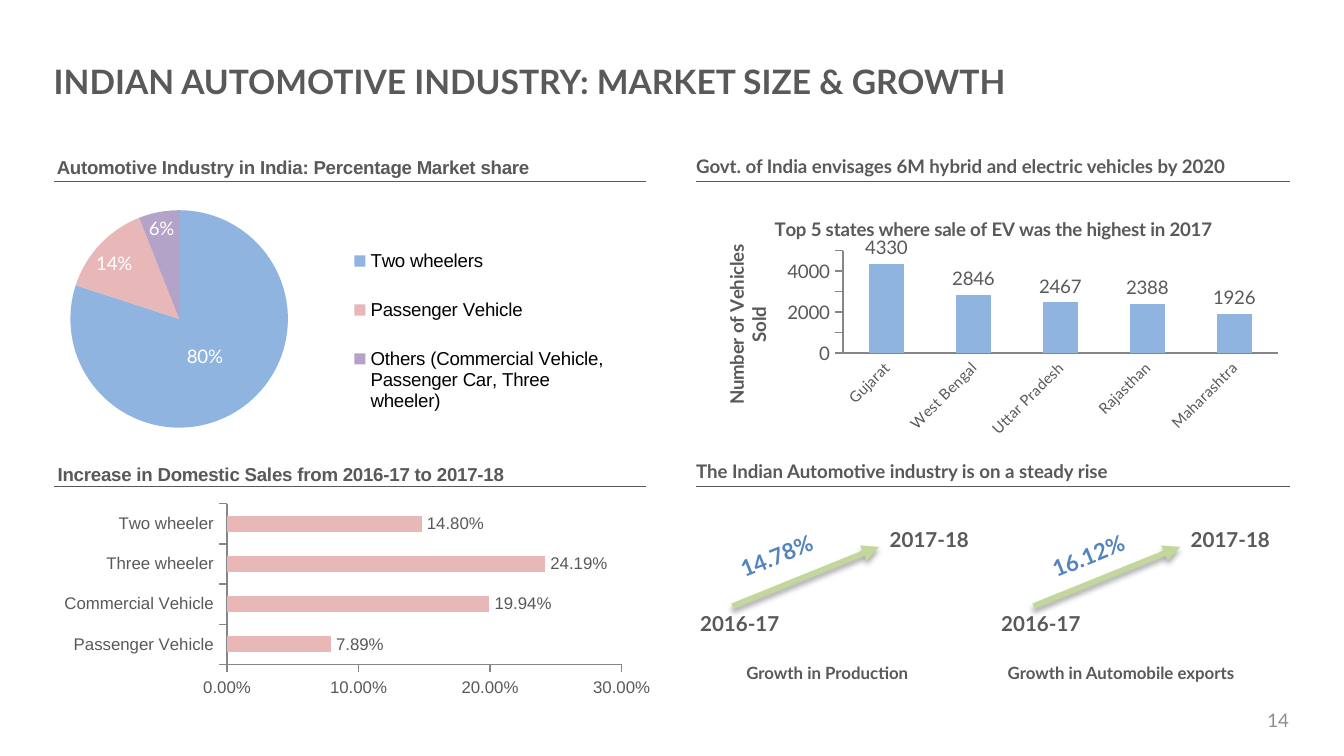
"""Build a slide on the size and growth of the Indian automotive industry."""
from lxml import etree
from pptx import Presentation
from pptx.chart.data import CategoryChartData
from pptx.dml.color import RGBColor
from pptx.enum.chart import XL_CHART_TYPE, XL_LABEL_POSITION, XL_LEGEND_POSITION, XL_TICK_MARK
from pptx.enum.shapes import MSO_CONNECTOR
from pptx.enum.text import MSO_ANCHOR, PP_ALIGN
from pptx.oxml import parse_xml
from pptx.oxml.ns import nsdecls, qn
from pptx.util import Inches, Pt

BAR, COLUMN, PIE = XL_CHART_TYPE.BAR_CLUSTERED, XL_CHART_TYPE.COLUMN_CLUSTERED, XL_CHART_TYPE.PIE
CENTER, INSIDE_END, OUTSIDE_END = (
    XL_LABEL_POSITION.CENTER, XL_LABEL_POSITION.INSIDE_END, XL_LABEL_POSITION.OUTSIDE_END)
TICK_OUT, TICK_NONE = XL_TICK_MARK.OUTSIDE, XL_TICK_MARK.NONE
LEGEND_RIGHT = XL_LEGEND_POSITION.RIGHT
STRAIGHT = MSO_CONNECTOR.STRAIGHT
MIDDLE, TOP = MSO_ANCHOR.MIDDLE, MSO_ANCHOR.TOP
ALIGN_LEFT, ALIGN_CENTER, ALIGN_RIGHT = PP_ALIGN.LEFT, PP_ALIGN.CENTER, PP_ALIGN.RIGHT

GREY = RGBColor(0x59, 0x59, 0x59)
LIGHT_GREY = RGBColor(0x8C, 0x8C, 0x8C)
AXIS_GREY = RGBColor(0x86, 0x86, 0x86)
BLACK = RGBColor(0, 0, 0)
WHITE = RGBColor(0xFF, 0xFF, 0xFF)
BLUE = RGBColor(0x8F, 0xB4, 0xE0)
DARK_BLUE = RGBColor(0x53, 0x84, 0xBE)
PINK = RGBColor(0xE7, 0xB8, 0xB7)
PURPLE = RGBColor(0xB3, 0xA3, 0xC8)
GREEN = RGBColor(0xC3, 0xD6, 0x9B)

COLUMNS = ((0.4, 4.41), (5.18, 4.42))
RULES = (1.35, 3.62)
PANEL_LEFT, PANEL_STEP = 5.13, 2.24
SMALL_INSETS = (0.08, 0.04, 0.08, 0.04)


def set_font(font, size, color, name="Lato", bold=False):
    font.name, font.size, font.bold = name, Pt(size), bold
    font.color.rgb = color


def add_text(slide, box, text, size, color=GREY, bold=True, align=ALIGN_LEFT,
             anchor=TOP, insets=SMALL_INSETS, rotation=0):
    shape = slide.shapes.add_textbox(*map(Inches, box))
    shape.rotation = rotation
    frame = shape.text_frame
    frame.word_wrap = True
    frame.vertical_anchor = anchor
    (frame.margin_left, frame.margin_top,
     frame.margin_right, frame.margin_bottom) = map(Inches, insets)
    paragraph = frame.paragraphs[0]
    paragraph.text = text
    paragraph.alignment = align
    set_font(paragraph.font, size, color, bold=bold)


def add_line(slide, start, end, color, width):
    line = slide.shapes.add_connector(STRAIGHT, *map(Inches, start + end))
    line.line.color.rgb = color
    line.line.width = Pt(width)
    effects = etree.SubElement(line._element.spPr, qn("a:effectLst"))
    return line, effects


def add_arrow(slide, start, end):
    arrow, effects = add_line(slide, start, end, GREEN, 3)
    etree.SubElement(arrow.line._get_or_add_ln(), qn("a:tailEnd"), type="triangle")
    effects.append(parse_xml(
        f'<a:outerShdw {nsdecls("a")} blurRad="{Pt(3.1)}" dist="{Pt(1.8)}" dir="5400000" '
        'rotWithShape="0"><a:srgbClr val="000000"><a:alpha val="35000"/></a:srgbClr></a:outerShdw>'))


def set_layout(element, index, mode="edge", **percents):
    for old in element.findall(qn("c:layout")):
        element.remove(old)
    layout = etree.Element(qn("c:layout"))
    manual = etree.SubElement(layout, qn("c:manualLayout"))
    if element.tag == qn("c:plotArea"):
        etree.SubElement(manual, qn("c:layoutTarget"), val="inner")
    for side in ("x", "y"):
        etree.SubElement(manual, qn(f"c:{side}Mode"), val=mode)
    for name, percent in percents.items():
        etree.SubElement(manual, qn(f"c:{name}"), val=f"{percent / 100:.3f}")
    element.insert(index, layout)


def add_chart(slide, kind, box, title, series_name, values, number_format, font_name, plot, title_at=None):
    data = CategoryChartData(number_format=number_format)
    data.categories = list(values)
    data.add_series(series_name, list(values.values()))
    chart = slide.shapes.add_chart(kind, *map(Inches, box), data).chart
    set_font(chart.font, 10, BLACK, font_name)
    chart.has_legend = False
    chart.has_title = True
    chart.chart_title.text_frame.text = title
    set_font(chart.chart_title.text_frame.paragraphs[0].font, 10, GREY, font_name, True)
    if title_at:
        set_layout(chart.chart_title._element, 1, x=title_at[0], y=title_at[1])
    set_layout(chart._chartSpace.chart.plotArea, 0, **dict(zip("xywh", plot)))
    return chart


def style_labels(chart, size, color, position, number_format, font_name):
    plot = chart.plots[0]
    plot.has_data_labels = True
    labels = plot.data_labels
    labels.show_value = True
    labels.number_format, labels.number_format_is_linked = number_format, False
    labels.position = position
    set_font(labels.font, size, color, font_name)


def style_bars(chart, color, sizes, category_tick, maximum, step, number_format, font_name):
    plot = chart.plots[0]
    plot.vary_by_categories = False
    plot.gap_width = 150
    fill = plot.series[0].format.fill
    fill.solid()
    fill.fore_color.rgb = color
    for axis, size, tick in zip((chart.category_axis, chart.value_axis), sizes,
                                (category_tick, TICK_OUT)):
        axis.has_major_gridlines = False
        axis.major_tick_mark, axis.minor_tick_mark = tick, TICK_NONE
        axis.format.line.color.rgb = AXIS_GREY
        set_font(axis.tick_labels.font, size, GREY, font_name)
    axis = chart.value_axis
    axis.minimum_scale, axis.maximum_scale, axis.major_unit = 0, maximum, step
    axis.tick_labels.number_format = number_format
    axis.tick_labels.number_format_is_linked = False
    style_labels(chart, sizes[1], GREY, OUTSIDE_END, number_format, font_name)


def add_share_pie(slide):
    shares = {"Two wheelers": 0.8, "Passenger Vehicle": 0.14,
              "Others (Commercial Vehicle, Passenger Car, Three wheeler)": 0.06}
    chart = add_chart(slide, PIE, (0, 0.62, 4.67, 2.88),
                      "Automotive Industry in India: Percentage Market share", "Series 1",
                      shares, "0%", "Arial", (11.2, 32.8, 34.7, 56.2), (8.5, 17.8))
    style_labels(chart, 10, WHITE, INSIDE_END, "0%", "Lato")
    points = chart.plots[0].series[0].points
    styles = ((BLUE, CENTER, -1, -1.8), (PINK, INSIDE_END, -1.5, 0.5),
              (PURPLE, INSIDE_END, -1.8, -0.8))
    for index, (color, position, shift_x, shift_y) in enumerate(styles):
        fill = points[index].format.fill
        fill.solid()
        fill.fore_color.rgb = color
        label = points[index].data_label
        set_font(label.font, 10, WHITE)
        label.position = position
        set_layout(label._dLbl, 1, "factor", x=shift_x, y=shift_y)
    chart.has_legend = True
    chart.legend.position = LEGEND_RIGHT
    chart.legend.include_in_layout = False
    set_font(chart.legend.font, 10, BLACK, "Arial")
    set_layout(chart.legend._element, 1, x=54.8, y=36, w=43, h=56)


def add_sales_bars(slide):
    title = "Increase in Domestic Sales from 2016-17 to 2017-18"
    growth = {"Passenger Vehicle": 0.0789, "Commercial Vehicle": 0.1994,
              "Three wheeler": 0.2419, "Two wheeler": 0.148}
    chart = add_chart(slide, BAR, (0.38, 3.38, 4.61, 1.94), title, title, growth, "0.00%",
                      "Arial", (28.4, 19, 63.7, 61.7), (0.5, 1.7))
    style_bars(chart, PINK, (9, 9), TICK_OUT, 0.3, 0.1, "0.00%", "Arial")


def add_state_columns(slide):
    title = "Top 5 states where sale of EV was the highest in 2017"
    sales = {"Gujarat": 4330, "West Bengal": 2846, "Uttar Pradesh": 2467,
             "Rajasthan": 2388, "Maharashtra": 1926}
    chart = add_chart(slide, COLUMN, (5.18, 1.49, 4.42, 1.8), title, title, sales, "General",
                      "Lato", (24.7, 20.8, 73.2, 42.4))
    style_bars(chart, BLUE, (8, 10), TICK_NONE, 5000, 1000, "General", "Lato")
    chart.category_axis._element.txPr.bodyPr.set("rot", "-2700000")
    axis_title = chart.value_axis.axis_title
    axis_title.text_frame.text = "Number of Vehicles Sold"
    set_font(axis_title.text_frame.paragraphs[0].font, 10, GREY, bold=True)
    set_layout(axis_title._element, 1, x=4, y=16.8)


def add_growth_panel(slide, index, rate, rate_offset, caption, caption_offset, caption_width):
    left = PANEL_LEFT + index * PANEL_STEP
    add_arrow(slide, (left + 0.32, 4.51), (left + 1.41, 4.07))
    add_text(slide, (left, 4.51, 0.9, 0.26), "2016-17", 11)
    add_text(slide, (left + 1.41, 3.88, 0.9, 0.26), "2017-18", 11)
    add_text(slide, (left + rate_offset, 3.96, 0.9, 0.28), rate, 12, DARK_BLUE, rotation=338)
    add_text(slide, (left + caption_offset, 4.89, caption_width, 0.23), caption, 9,
             align=ALIGN_CENTER)


def main():
    presentation = Presentation()
    presentation.slide_width = Inches(10)
    presentation.slide_height = presentation.slide_width * 9 // 16
    slide = presentation.slides.add_slide(presentation.slide_layouts[6])
    add_text(slide, (0.4, 0.4, 8.24, 0.4), "INDIAN AUTOMOTIVE INDUSTRY: MARKET SIZE & GROWTH",
             18, anchor=MIDDLE, insets=(0, 0.05, 0.1, 0.05))
    add_text(slide, (9.06, 5.21, 0.53, 0.3), "14", 10, LIGHT_GREY, False, ALIGN_RIGHT, MIDDLE,
             (0.1, 0.05, 0, 0.05))
    headings = ("Govt. of India envisages 6M hybrid and electric vehicles by 2020",
                "The Indian Automotive industry is on a steady rise")
    left, width = COLUMNS[1]
    for rule, heading in zip(RULES, headings):
        add_text(slide, (left, rule - 0.2, width, 0.17), heading, 10, insets=(0, 0, 0, 0))
    add_growth_panel(slide, 0, "14.78%", 0.28, "Growth in Production", 0.19, 1.67)
    add_growth_panel(slide, 1, "16.12%", 0.36, "Growth in Automobile exports", -0.05, 2.04)
    add_sales_bars(slide)
    add_state_columns(slide)
    add_share_pie(slide)
    for rule in RULES:
        for left, width in COLUMNS:
            add_line(slide, (left, rule), (left + width, rule), GREY, 0.75)
    presentation.save("out.pptx")


if __name__ == "__main__":
    main()
